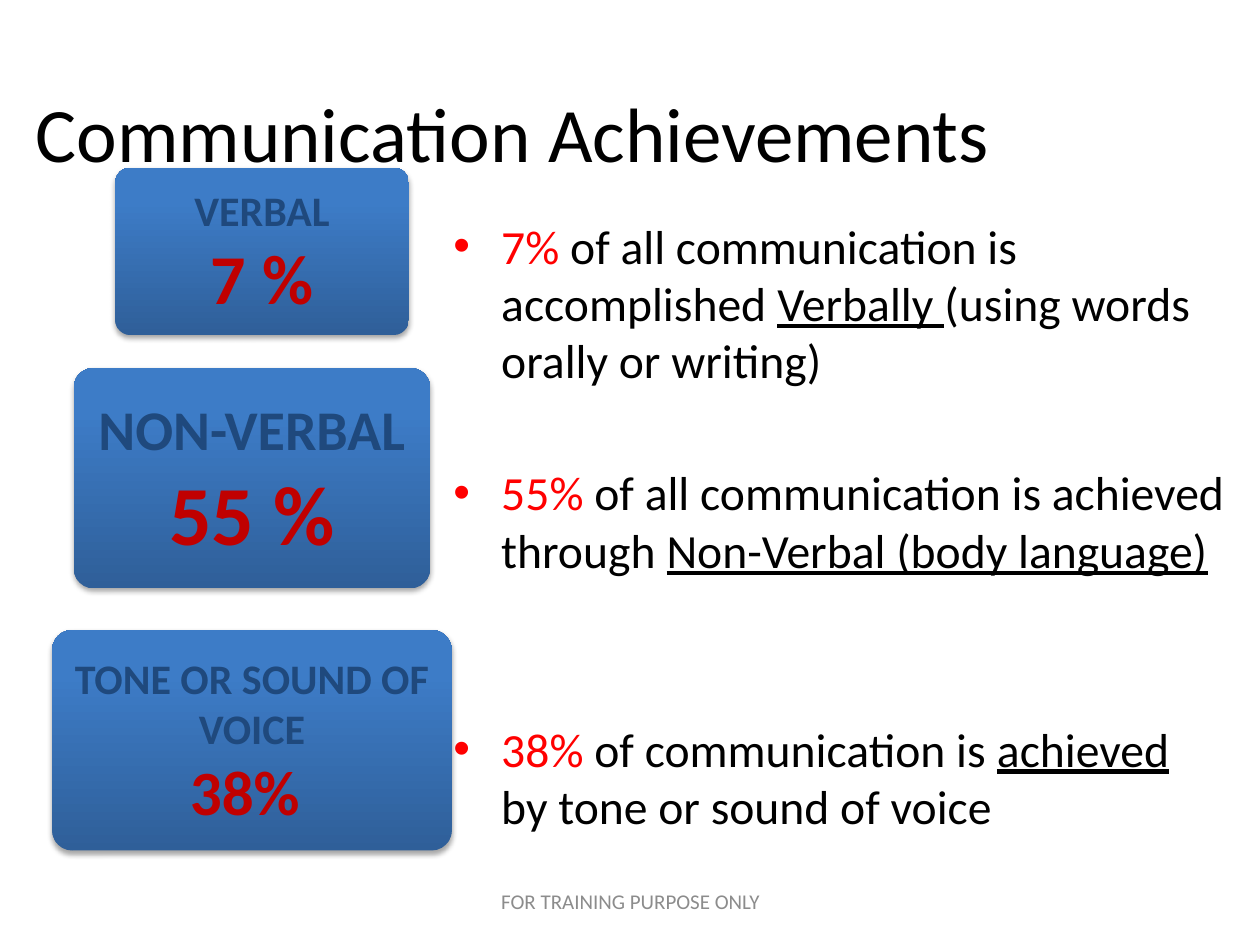
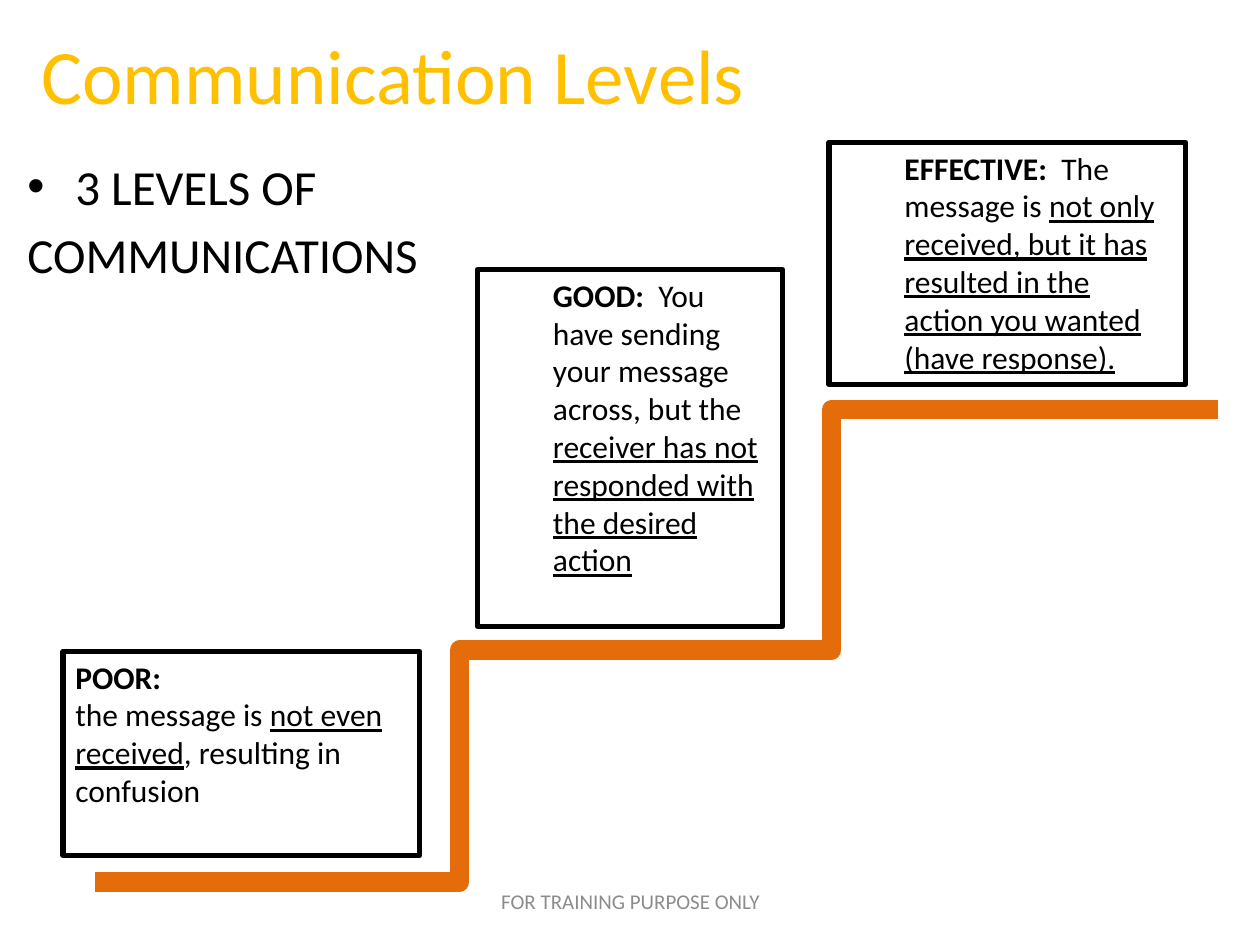
"""Build two slides on communication achievements and communication levels."""
from lxml.etree import SubElement
from pptx import Presentation
from pptx.dml.color import RGBColor
from pptx.enum.shapes import MSO_CONNECTOR, MSO_SHAPE
from pptx.enum.text import MSO_ANCHOR, PP_ALIGN
from pptx.oxml.ns import qn
from pptx.util import Inches, Pt

FONT = "Calibri"
BLACK = RGBColor(0x00, 0x00, 0x00)
RED = RGBColor(0xFF, 0x00, 0x00)
DARK_RED = RGBColor(0xC0, 0x00, 0x00)
NAVY = RGBColor(0x1F, 0x49, 0x7D)
AMBER = RGBColor(0xFF, 0xC0, 0x00)
ORANGE = RGBColor(0xE4, 0x6C, 0x0A)
GREY = RGBColor(0x8C, 0x8C, 0x8C)
CARD_BOTTOM = RGBColor(0x2F, 0x5F, 0x99)
CARD_TOP = RGBColor(0x3D, 0x7C, 0xC7)

PLAIN, BOLD, UNDERLINED, SHARE = "plain", "bold", "underlined", "share"
HANGING = 0.38
FOOTER = "FOR TRAINING PURPOSE ONLY"

ACHIEVEMENTS_TITLE = "Communication Achievements "
ACHIEVEMENTS = [
    (0, [("7% ", SHARE), ("of all communication is accomplished ", PLAIN),
         ("Verbally ", UNDERLINED), ("(using words orally or writing)", PLAIN)]),
    (43, [("55% ", SHARE), ("of all communication is achieved through ", PLAIN),
          ("Non-Verbal (body language)", UNDERLINED)]),
    (81, [("38% ", SHARE), ("of communication is ", PLAIN),
          ("achieved", UNDERLINED), (" by tone or sound of voice", PLAIN)]),
]
CHANNEL_CENTER = 2
CHANNELS = [
    ("VERBAL", 24, "7 %", 40, 1.33, 2.33, 1.33),
    ("NON-VERBAL", 32, "55 %", 48, 2.92, 2.83, 1.75),
    ("TONE OR SOUND OF VOICE", 24, "38% ", 36, 5, 3.17, 1.75),
]

LEVELS_TITLE = "Communication Levels"
LEVELS_HEADING = [("3 LEVELS OF", True, 0), ("COMMUNICATIONS", False, 5.6)]
LEVELS = [
    ((0.5, 5.17, 2.83, 1.62), 0, [
        [("POOR:", BOLD)],
        [("the message is ", PLAIN), ("not even received", UNDERLINED),
         (", resulting in confusion", PLAIN)]]),
    ((3.79, 2.14, 2.42, 2.83), 0.5, [
        [("GOOD:  ", BOLD),
         ("You have sending your message across, but the ", PLAIN),
         ("receiver has not responded with the desired action", UNDERLINED)]]),
    ((6.58, 1.13, 2.83, 1.92), 0.5, [
        [("EFFECTIVE:  ", BOLD), ("The message is ", PLAIN),
         ("not only received, but it has resulted in the action you wanted "
          "(have response).", UNDERLINED)]]),
]
STEPS = [((0.75, 7), (6.56, 5.16), 3.65), ((4.07, 5.16), (9.67, 3.25), 6.6)]


def inches(values):
    return [Inches(value) for value in values]


def style_font(paragraph, size, color=BLACK, bold=None):
    font = paragraph.font
    font.name, font.size, font.bold = FONT, Pt(size), bold
    font.color.rgb = color


def indent(paragraph, left, first=0.0, bullet=False):
    properties = paragraph._p.get_or_add_pPr()
    properties.set("marL", str(Inches(left)))
    properties.set("indent", str(Inches(first)))
    if bullet:
        SubElement(properties, qn("a:buFont"), typeface="Arial")
        SubElement(properties, qn("a:buChar"), char="•")


def add_runs(paragraph, pieces):
    for words, style in pieces:
        run = paragraph.add_run()
        run.text = words
        if style == BOLD:
            run.font.bold = True
        elif style == UNDERLINED:
            run.font.underline = True
        elif style == SHARE:
            run.font.color.rgb = RED


def paragraphs_for(frame, items):
    for index, item in enumerate(items):
        yield (frame.add_paragraph() if index else frame.paragraphs[0]), item


def add_text_area(slide, place):
    frame = slide.shapes.add_textbox(*inches(place)).text_frame
    frame.word_wrap = True
    return frame


def add_centered(slide, words, place, size, color):
    frame = add_text_area(slide, place)
    frame.vertical_anchor = MSO_ANCHOR.MIDDLE
    line = frame.paragraphs[0]
    line.text, line.alignment = words, PP_ALIGN.CENTER
    style_font(line, size, color)


def add_title(slide, words, place, color):
    add_centered(slide, words, place, 44, color)


def add_footer(slide):
    add_centered(slide, FOOTER, (3.42, 6.95, 3.17, 0.4), 12, GREY)


def add_channel(slide, name, name_size, share, share_size, top, width, height):
    left = CHANNEL_CENTER + 0.08 - width / 2 if width < 2.5 else CHANNEL_CENTER - width / 2
    card = slide.shapes.add_shape(
        MSO_SHAPE.ROUNDED_RECTANGLE, *inches((left, top, width, height)))
    card.adjustments[0] = 0.09
    card.line.fill.background()
    card.fill.gradient()
    card.fill.gradient_angle = 90
    for stop, color, position in zip(
            card.fill.gradient_stops, (CARD_BOTTOM, CARD_TOP), (0, 0.8)):
        stop.color.rgb, stop.position = color, position
    card.shadow.inherit = False
    effects = card._element.spPr.find(qn("a:effectLst"))
    shadow = SubElement(effects, qn("a:outerShdw"), blurRad=str(Pt(3.1)),
                        dist=str(Pt(1.8)), dir="5400000", rotWithShape="0")
    tone = SubElement(shadow, qn("a:srgbClr"), val=str(BLACK))
    SubElement(tone, qn("a:alpha"), val="35000")
    frame = card.text_frame
    frame.word_wrap, frame.vertical_anchor = True, MSO_ANCHOR.MIDDLE
    labels = [(name, name_size, NAVY), (share, share_size, DARK_RED)]
    for line, (words, size, color) in paragraphs_for(frame, labels):
        line.text, line.alignment = words, PP_ALIGN.CENTER
        style_font(line, size, color, True)


def add_step(slide, start, end, riser):
    step = slide.shapes.add_connector(MSO_CONNECTOR.ELBOW, *inches(start + end))
    step.line.color.rgb, step.line.width = ORANGE, Pt(11)
    properties = step._element.spPr
    SubElement(properties, qn("a:effectLst"))
    geometry = properties.find(qn("a:prstGeom"))
    guides = geometry.find(qn("a:avLst"))
    if guides is None:
        guides = SubElement(geometry, qn("a:avLst"))
    bend = round((riser - start[0]) / (end[0] - start[0]) * 100000)
    SubElement(guides, qn("a:gd"), name="adj1", fmla=f"val {bend}")


def add_level(slide, place, text_indent, lines):
    box = slide.shapes.add_shape(MSO_SHAPE.RECTANGLE, *inches(place))
    box.fill.background()
    box.line.color.rgb, box.line.width = BLACK, Pt(3)
    box.shadow.inherit = False
    frame = box.text_frame
    frame.word_wrap, frame.vertical_anchor = True, MSO_ANCHOR.TOP
    for line, pieces in paragraphs_for(frame, lines):
        line.alignment = PP_ALIGN.LEFT
        indent(line, text_indent)
        style_font(line, 18)
        add_runs(line, pieces)


def build_achievements(slide):
    add_title(slide, ACHIEVEMENTS_TITLE, (0.04, 0.42, 8.2, 1.25), BLACK)
    frame = add_text_area(slide, (3.5, 1.67, 6.33, 5.08))
    for line, (gap, pieces) in paragraphs_for(frame, ACHIEVEMENTS):
        line.space_before = Pt(gap)
        indent(line, HANGING, -HANGING, bullet=True)
        style_font(line, 27.2)
        add_runs(line, pieces)
    for channel in CHANNELS:
        add_channel(slide, *channel)
    add_footer(slide)


def build_levels(slide):
    add_title(slide, LEVELS_TITLE, (0.12, 0.17, 6, 0.83), AMBER)
    frame = add_text_area(slide, (0.12, 1.19, 9.67, 6.25))
    for line, (words, bullet, gap) in paragraphs_for(frame, LEVELS_HEADING):
        line.text, line.space_before = words, Pt(gap)
        indent(line, HANGING, -HANGING, bullet)
        style_font(line, 28)
    for step in STEPS:
        add_step(slide, *step)
    for level in LEVELS:
        add_level(slide, *level)
    add_footer(slide)


def main():
    deck = Presentation()
    deck.slide_width, deck.slide_height = Inches(10), Inches(7.5)
    blank = deck.slide_layouts[6]
    for build in (build_achievements, build_levels):
        build(deck.slides.add_slide(blank))
    deck.save("out.pptx")


if __name__ == "__main__":
    main()
